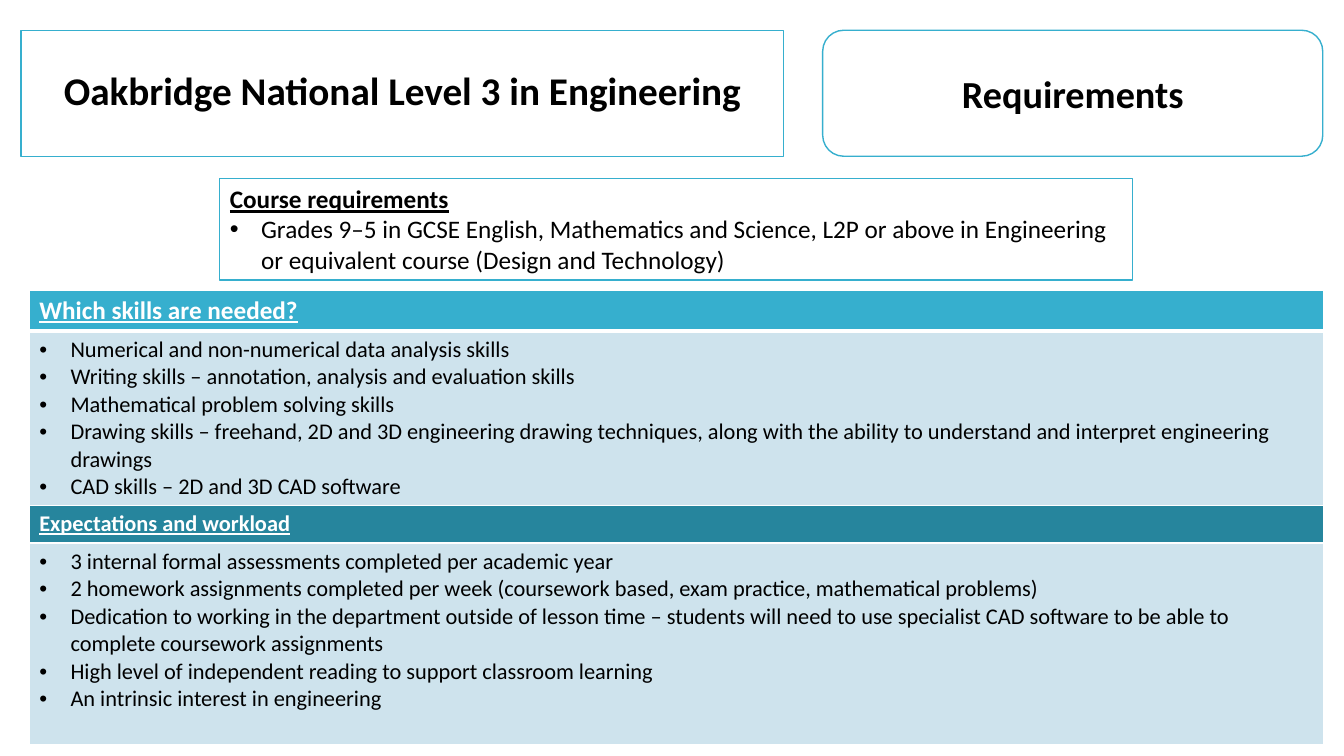
from lxml import etree
from pptx import Presentation, util as u
from pptx.dml.color import RGBColor
from pptx.enum import shapes, text
from pptx.oxml import ns

THEME = {
    "font": "Calibri",
    "black": RGBColor.from_string("000000"),
    "white": RGBColor.from_string("FFFFFF"),
    "blue": RGBColor.from_string("36AFCE"),
    "dark": RGBColor.from_string("26859D"),
    "pale": RGBColor.from_string("CEE3ED"),
    "title": 28, "label": 27.3, "heading": 18, "list": 16,
}
HEADING = {"bold": True, "underline": True}
PLAIN = {"bold": False, "underline": False}


def write_lines(frame, lines, size, color, style, bullet=False, first=True):
    for number, line in enumerate(lines):
        paragraph = frame.paragraphs[0] if first and number == 0 else frame.add_paragraph()
        paragraph.space_before = u.Pt(0)
        run = paragraph.add_run()
        run.text = line
        values = {"name": THEME["font"], "size": u.Pt(THEME[size]), **style}
        for name, value in values.items():
            setattr(run.font, name, value)
        run.font.color.rgb = THEME[color]
        properties = paragraph._p.get_or_add_pPr()
        indent = u.Inches(0.31) if bullet else 0
        properties.set("marL", str(indent))
        properties.set("indent", str(-indent))
        if bullet:
            etree.SubElement(properties, ns.qn("a:buFont")).set("typeface", "Arial")
            etree.SubElement(properties, ns.qn("a:buChar")).set("char", "•")
        else:
            etree.SubElement(properties, ns.qn("a:buNone"))


def format_box(shape, box, anchor):
    for name, value in zip(("left", "top", "width", "height"), box):
        setattr(shape, name, u.Inches(value))
    shape.fill.solid()
    shape.fill.fore_color.rgb = THEME["white"]
    shape.line.color.rgb = THEME["blue"]
    shape.line.width = u.Pt(1)
    values = {"word_wrap": True, "auto_size": text.MSO_AUTO_SIZE.NONE, "vertical_anchor": anchor}
    for name, value in values.items():
        setattr(shape.text_frame, name, value)


presentation = Presentation()
presentation.slide_width = u.Inches(13.33)
presentation.slide_height = u.Inches(7.5)
slide = presentation.slides.add_slide(presentation.slide_layouts[1])

title = slide.shapes.title
format_box(title, (0.21, 0.3, 7.56, 1.25), text.MSO_ANCHOR.MIDDLE)
write_lines(title.text_frame, ["Oakbridge National Level 3 in Engineering"],
            "title", "black", {"bold": True})
title.text_frame.paragraphs[0].line_spacing = 0.9

label = slide.shapes.add_shape(shapes.MSO_SHAPE.ROUNDED_RECTANGLE, 0, 0, 0, 0)
label.shadow.inherit = False
format_box(label, (8.16, 0.3, 4.96, 1.25), text.MSO_ANCHOR.MIDDLE)
write_lines(label.text_frame, ["Requirements"], "label", "black", {"bold": True})

for shape in (title, label):
    shape.text_frame.paragraphs[0].alignment = text.PP_ALIGN.CENTER

requirements = slide.placeholders[1]
format_box(requirements, (2.18, 1.77, 9.05, 1.01), text.MSO_ANCHOR.TOP)
write_lines(requirements.text_frame, ["Course requirements"], "heading", "black", HEADING)
write_lines(requirements.text_frame, [
    "Grades 9–5 in GCSE English, Mathematics and Science, L2P or above in Engineering "
    "or equivalent course (Design and Technology)",
], "heading", "black", PLAIN, bullet=True, first=False)

skills = [
    "Numerical and non-numerical data analysis skills",
    "Writing skills – annotation, analysis and evaluation skills",
    "Mathematical problem solving skills",
    "Drawing skills – freehand, 2D and 3D engineering drawing techniques, along with "
    "the ability to understand and interpret engineering drawings",
    "CAD skills – 2D and 3D CAD software",
]
expectations = [
    "3 internal formal assessments completed per academic year",
    "2 homework assignments completed per week (coursework based, exam practice, "
    "mathematical problems)",
    "Dedication to working in the department outside of lesson time – students will need "
    "to use specialist CAD software to be able to complete coursework assignments",
    "High level of independent reading to support classroom learning",
    "An intrinsic interest in engineering",
]
rows = [
    (0.4, "blue", ["Which skills are needed?"], "heading", "white", HEADING, False, 3),
    (1.73, "pale", skills, "list", "black", PLAIN, True, 1),
    (0.37, "dark", ["Expectations and workload"], "list", "white", HEADING, False, 1),
    (2, "pale", expectations, "list", "black", PLAIN, True, 1),
]
table = slide.shapes.add_table(len(rows), 1, u.Inches(0.29), u.Inches(2.88),
                               u.Inches(12.84), u.Inches(4.5)).table
top_width = 1
for number, (height, fill, lines, size, color, style, bullet, bottom_width) in enumerate(rows):
    table.rows[number].height = u.Inches(height)
    cell = table.cell(number, 0)
    write_lines(cell.text_frame, lines, size, color, style, bullet)
    properties = cell._tc.get_or_add_tcPr()
    for side, width in (("L", 1), ("R", 1), ("T", top_width), ("B", bottom_width)):
        border = etree.SubElement(properties, ns.qn("a:ln" + side), w=str(u.Pt(width)))
        border_fill = etree.SubElement(border, ns.qn("a:solidFill"))
        etree.SubElement(border_fill, ns.qn("a:srgbClr"), val=str(THEME["white"]))
    cell.fill.solid()
    cell.fill.fore_color.rgb = THEME[fill]
    top_width = bottom_width

presentation.save("out.pptx")
